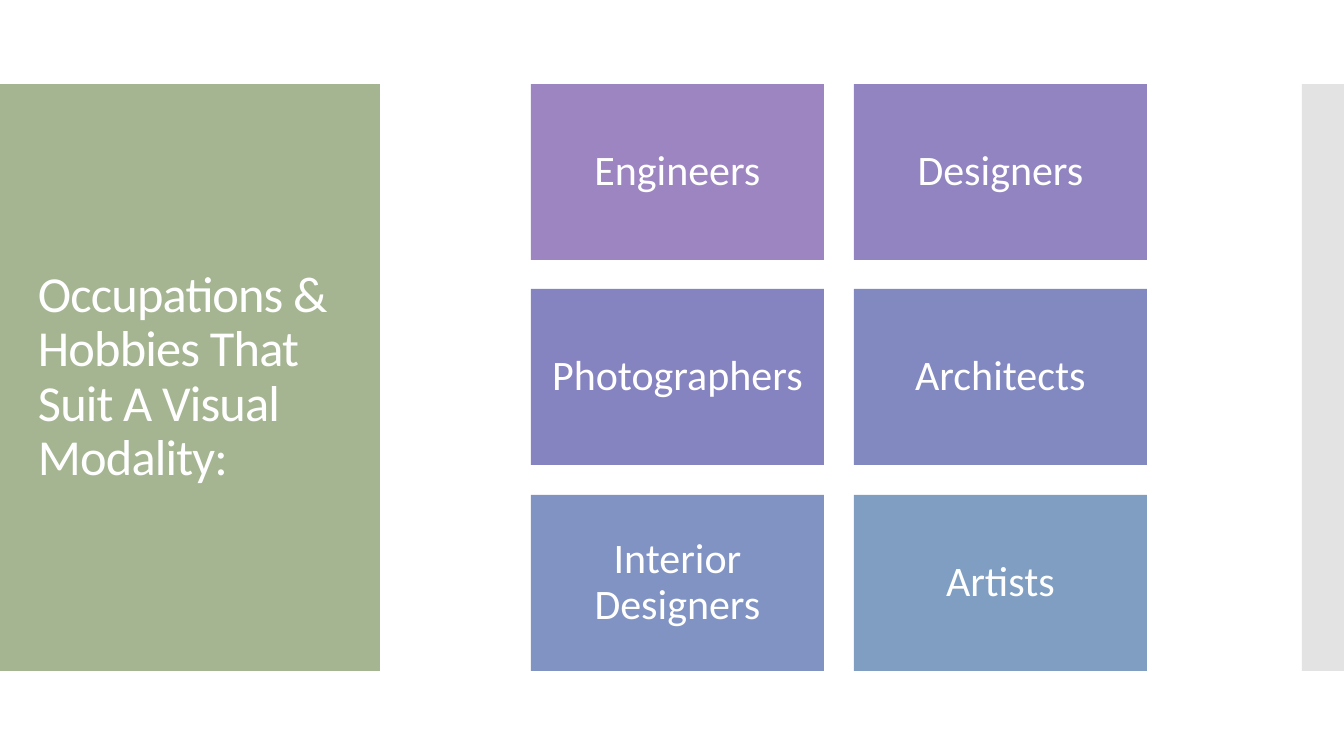
"""Build a slide of occupations and hobbies that suit a visual modality."""
from lxml import etree
from pptx import Presentation
from pptx import util as u
from pptx.dml.color import RGBColor
from pptx.enum import shapes, text
from pptx.oxml.ns import qn

PX = 914400 / 100.8
COLORS = {
    "panel": "A5B592",
    "edge": "C8C8C8",
    "text": "FFFFFF",
    "Engineers": "9C85C0",
    "Designers": "9184C0",
    "Photographers": "8683C1",
    "Architects": "8289C1",
    "Interior Designers": "8193C2",
    "Artists": "809EC2",
}
OCCUPATIONS = ["Engineers", "Designers", "Photographers",
               "Architects", "Interior Designers", "Artists"]


def add_block(page, color, *bounds):
    block = page.shapes.add_shape(
        shapes.MSO_SHAPE.RECTANGLE, *[round(length * PX) for length in bounds])
    block.shadow.inherit = False
    block.fill.solid()
    block.fill.fore_color.rgb = RGBColor.from_string(COLORS[color])
    block.line.fill.background()
    return block


def write_text(box, words, size, align):
    frame = box.text_frame
    frame.word_wrap = True
    frame.vertical_anchor = text.MSO_ANCHOR.MIDDLE
    para = frame.paragraphs[0]
    para.alignment = align
    para.line_spacing = 0.9
    span = para.add_run()
    span.text = words
    span.font.name = "Calibri"
    span.font.size = u.Pt(size)
    span.font.color.rgb = RGBColor.from_string(COLORS["text"])
    return span


deck = Presentation()
deck.slide_width = round(1344 * PX)
deck.slide_height = round(756 * PX)
page = deck.slides.add_slide(deck.slide_layouts[6])

add_block(page, "panel", 0, 84, 380, 587)
edge = add_block(page, "edge", 1302, 84, 42, 587)
edge_color = edge.fill._xPr.find(qn("a:solidFill"))[0]
etree.SubElement(edge_color, qn("a:alpha")).set("val", "50000")

title = page.shapes.add_textbox(
    *[round(length * PX) for length in (28, 124, 325, 507)])
title_span = write_text(title, "Occupations & Hobbies That Suit A Visual Modality:",
                        36, text.PP_ALIGN.LEFT)
title_span.font._element.set("spc", "-60")

for index, occupation in enumerate(OCCUPATIONS):
    row, column = divmod(index, 2)
    tile = add_block(page, occupation,
                     531 + column * 323, 84 + row * 411 // 2, 293, 176)
    frame = tile.text_frame
    frame.margin_left = frame.margin_right = round(12 * PX)
    frame.margin_top = frame.margin_bottom = round(12 * PX)
    write_text(tile, occupation, 30, text.PP_ALIGN.CENTER)

deck.save("out.pptx")
